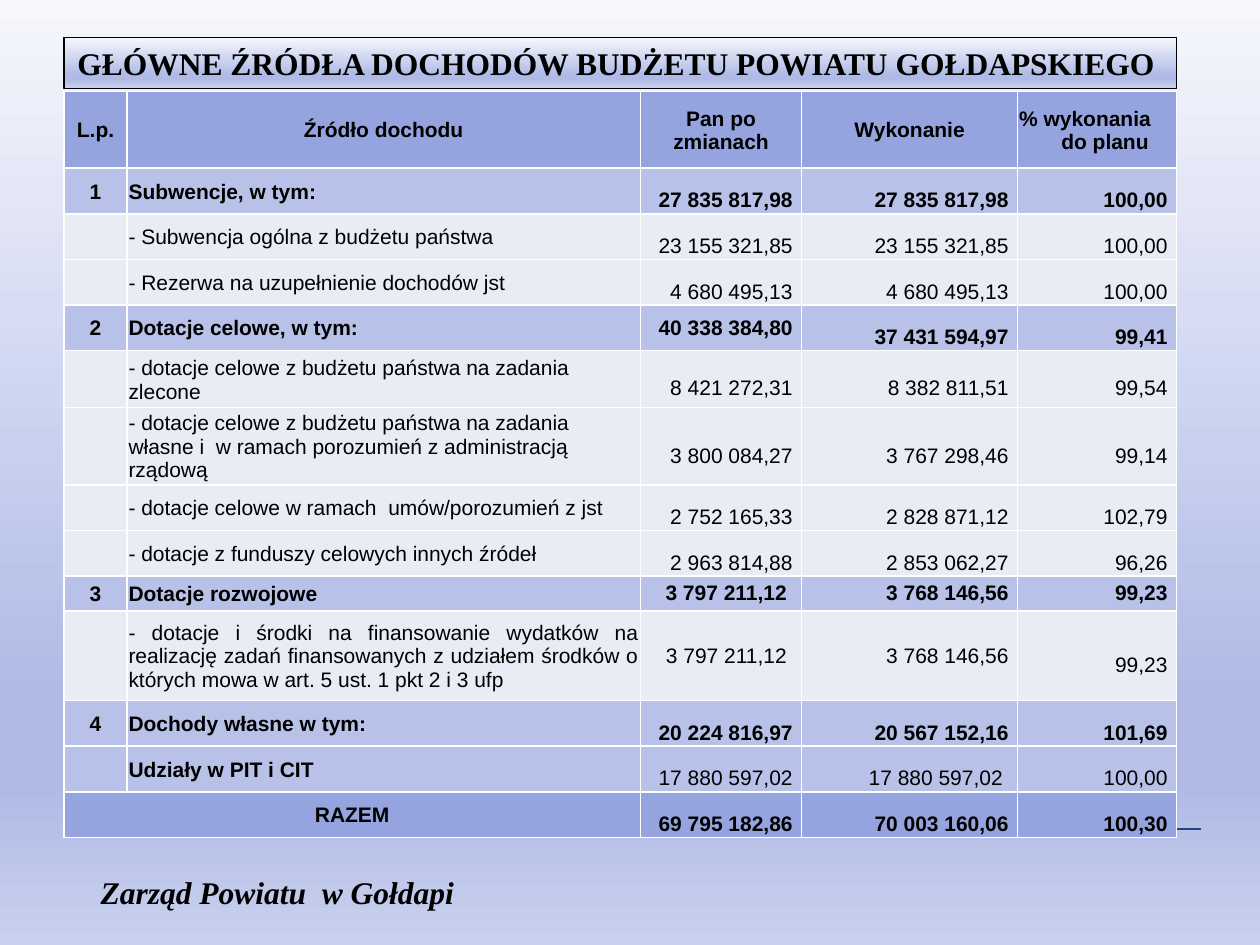
from collections import namedtuple
from dataclasses import dataclass

import pptx
import pptx.dml.color
import pptx.enum.shapes
import pptx.enum.text
import pptx.oxml
import pptx.oxml.ns
import pptx.util
from lxml import etree

Cm = pptx.util.Cm
Pt = pptx.util.Pt
Align = pptx.enum.text.PP_ALIGN
qn = pptx.oxml.ns.qn

Box = namedtuple("Box", "left top width height")
Entry = namedtuple("Entry", "kind height number label values single align",
                   defaults=((), Align.LEFT))


@dataclass(frozen=True)
class Theme:
    ink: str = "000000"
    rule: str = "2A3E8E"
    grid: str = "FFFFFF"
    total: str = "95A4DE"
    section: str = "B8C2E9"
    detail: str = "E9EBF5"
    gradient: tuple = ((0, "F6F7FC"), (74, "AFBBE6"), (83, "AFBBE6"), (100, "CAD1EE"))
    serif: str = "Times New Roman"
    sans: str = "Arial"
    heading_size: int = 18
    table_size: int = 12


THEME = Theme()
HEADING = {"name": THEME.serif, "size": Pt(THEME.heading_size), "bold": True}
SIGNATURE = {**HEADING, "italic": True}
REGULAR = {"name": THEME.sans, "size": Pt(THEME.table_size), "bold": False}
BOLD = {**REGULAR, "bold": True}

LABEL_CELL = {"margin_left": Cm(0.03), "margin_right": Cm(0.03),
              "margin_top": Cm(0.03), "margin_bottom": 0,
              "vertical_anchor": pptx.enum.text.MSO_ANCHOR.MIDDLE}
AMOUNT_CELL = {**LABEL_CELL, "margin_left": Cm(0.18), "margin_right": Cm(0.18),
               "margin_top": 0}

COLUMN_WIDTHS = (1.27, 10.34, 3.25, 4.35, 3.2)
HEADER_HEIGHT = 1.55
HEADERS = ("L.p.", "Źródło dochodu", "Pan po zmianach", "Wykonanie",
           "% wykonania\ndo planu")
# "single" lists the amounts set with single line spacing.
ENTRIES = (
    Entry("section", 0.92, "1", "Subwencje, w tym:",
          ("27 835 817,98", "27 835 817,98", "100,00")),
    Entry("detail", 0.92, "", "- Subwencja ogólna z budżetu państwa",
          ("23 155 321,85", "23 155 321,85", "100,00")),
    Entry("detail", 0.92, "", "- Rezerwa na uzupełnienie dochodów jst",
          ("4 680 495,13", "4 680 495,13", "100,00")),
    Entry("section", 0.92, "2", "Dotacje celowe, w tym:",
          ("40 338 384,80", "37 431 594,97", "99,41"), (0,)),
    Entry("detail", 1.15, "", "- dotacje celowe z budżetu państwa na zadania zlecone",
          ("8 421 272,31", "8 382 811,51", "99,54")),
    Entry("detail", 1.55, "", "- dotacje celowe z budżetu państwa na zadania własne "
          "i  w ramach porozumień z administracją rządową",
          ("3 800 084,27", "3 767 298,46", "99,14")),
    Entry("detail", 0.92, "", "- dotacje celowe w ramach  umów/porozumień z jst",
          ("2 752 165,33", "2 828 871,12", "102,79"), (), Align.JUSTIFY),
    Entry("detail", 0.92, "", "- dotacje z funduszy celowych innych źródeł",
          ("2 963 814,88", "2 853 062,27", "96,26"), (), Align.JUSTIFY),
    Entry("section", 0.7, "3", "Dotacje rozwojowe",
          (" 3 797 211,12 ", "3 768 146,56", "99,23"), (0, 1, 2)),
    Entry("detail", 1.81, "", "- dotacje i środki na finansowanie wydatków na realizację "
          "zadań finansowanych z udziałem środków o których mowa w art. 5 ust. 1 "
          "pkt 2 i 3 ufp",
          (" 3 797 211,12 ", "3 768 146,56", "99,23"), (0, 1), Align.JUSTIFY),
    Entry("section", 0.92, "4", "Dochody własne w tym:",
          ("20 224 816,97", "20 567 152,16", "101,69"), (), Align.JUSTIFY),
    Entry("share", 0.92, "", "Udziały w PIT i CIT",
          ("17 880 597,02", "17 880 597,02 ", "100,00"), (), Align.JUSTIFY),
    Entry("total", 0.92, "RAZEM", "",
          ("69 795 182,86", "70 003 160,06", "100,30")),
)
# Fill, label format and amount format of each kind of row.
KINDS = {
    "section": (THEME.section, BOLD, BOLD),
    "detail": (THEME.detail, REGULAR, REGULAR),
    "share": (THEME.section, BOLD, REGULAR),
    "total": (THEME.total, BOLD, BOLD),
}


def rgb(value):
    return pptx.dml.color.RGBColor.from_string(value)


def apply(target, values):
    for name, value in values.items():
        setattr(target, name, value)


def write(frame, text, font, **paragraph_format):
    frame.text = text
    for paragraph in frame.paragraphs:
        apply(paragraph, paragraph_format)
        for run in paragraph.runs:
            apply(run.font, font)
            run.font.color.rgb = rgb(THEME.ink)


def paint_gradient(fill, owner):
    """Fill with the theme gradient from top to bottom; owner holds the XML."""
    fill.gradient()
    fill.gradient_angle = 270
    stops = next(owner.iter(qn("a:gsLst")))
    for stop in list(stops):
        stops.remove(stop)
    for position, color in THEME.gradient:
        stop = etree.SubElement(stops, qn("a:gs"), pos=str(position * 1000))
        etree.SubElement(stop, qn("a:srgbClr"), val=color)


def draw_borders(cell):
    properties = cell._tc.get_or_add_tcPr()
    for index, side in enumerate(("lnL", "lnR", "lnT", "lnB")):
        border = pptx.oxml.parse_xml(
            f'<a:{side} {pptx.oxml.ns.nsdecls("a")} w="{Pt(1)}"><a:solidFill>'
            f'<a:srgbClr val="{THEME.grid}"/></a:solidFill></a:{side}>')
        properties.insert(index, border)


def add_rule(slide, box):
    rule = slide.shapes.add_connector(
        pptx.enum.shapes.MSO_CONNECTOR.STRAIGHT, Cm(box.left), Cm(box.top),
        Cm(box.left + box.width), Cm(box.top + box.height))
    rule.line.color.rgb = rgb(THEME.rule)
    rule.line.width = Pt(1.25)
    etree.SubElement(rule._element.spPr, qn("a:effectLst"))


def add_signature(slide, box):
    signature = slide.shapes.add_textbox(*map(Cm, box))
    signature.text_frame.word_wrap = True
    write(signature.text_frame, "Zarząd Powiatu  w Gołdapi", SIGNATURE)


def add_title(slide, box):
    title = slide.shapes.add_shape(
        pptx.enum.shapes.MSO_SHAPE.RECTANGLE, *map(Cm, box))
    title.shadow.inherit = False
    paint_gradient(title.fill, title._element)
    title.line.color.rgb = rgb(THEME.ink)
    title.line.width = Pt(0.75)
    write(title.text_frame, "GŁÓWNE ŹRÓDŁA DOCHODÓW BUDŻETU POWIATU GOŁDAPSKIEGO ",
          HEADING, alignment=Align.CENTER)


def add_income_table(slide, box):
    table = slide.shapes.add_table(
        len(ENTRIES) + 1, len(HEADERS), *map(Cm, box)).table
    apply(table, {"first_row": False, "horz_banding": False})
    for column, width in zip(table.columns, COLUMN_WIDTHS):
        column.width = Cm(box.width * width / sum(COLUMN_WIDTHS))

    def fill_row(index, height, color):
        table.rows[index].height = Cm(height)
        cells = list(table.rows[index].cells)
        for cell in cells:
            cell.fill.solid()
            cell.fill.fore_color.rgb = rgb(color)
            draw_borders(cell)
            apply(cell, LABEL_CELL)
        return cells

    header = fill_row(0, HEADER_HEIGHT, THEME.total)
    for cell, text in zip(header, HEADERS):
        write(cell.text_frame, text, BOLD, alignment=Align.CENTER)
    first_line, second_line = header[-1].text_frame.paragraphs
    first_line.alignment = second_line.alignment = Align.LEFT
    second_line._p.get_or_add_pPr().set("marL", str(Cm(0.85)))

    for index, entry in enumerate(ENTRIES, start=1):
        color, label_font, amount_font = KINDS[entry.kind]
        number, label, *amounts = fill_row(index, entry.height, color)
        write(number.text_frame, entry.number, BOLD, alignment=Align.CENTER)
        write(label.text_frame, entry.label, label_font, alignment=entry.align)
        for position, (cell, amount) in enumerate(zip(amounts, entry.values)):
            apply(cell, AMOUNT_CELL)
            write(cell.text_frame, amount, amount_font, alignment=Align.RIGHT,
                  line_spacing=1.0 if position in entry.single else 1.8)
        if entry.kind == "total":
            number.merge(label)


def main():
    deck = pptx.Presentation()
    apply(deck, {"slide_width": Cm(25.4), "slide_height": Cm(19.05)})
    slide = deck.slides.add_slide(deck.slide_layouts[6])
    paint_gradient(slide.background.fill, slide._element)
    table_height = HEADER_HEIGHT + sum(entry.height for entry in ENTRIES)
    add_rule(slide, Box(1.78, 16.71, 22.43, 0))
    add_signature(slide, Box(1.78, 17.48, 10.31, 1.02))
    add_title(slide, Box(1.29, 0.76, 22.43, 1.02))
    add_income_table(slide, Box(1.29, 1.84, 22.43, table_height))
    deck.save("out.pptx")


if __name__ == "__main__":
    main()
